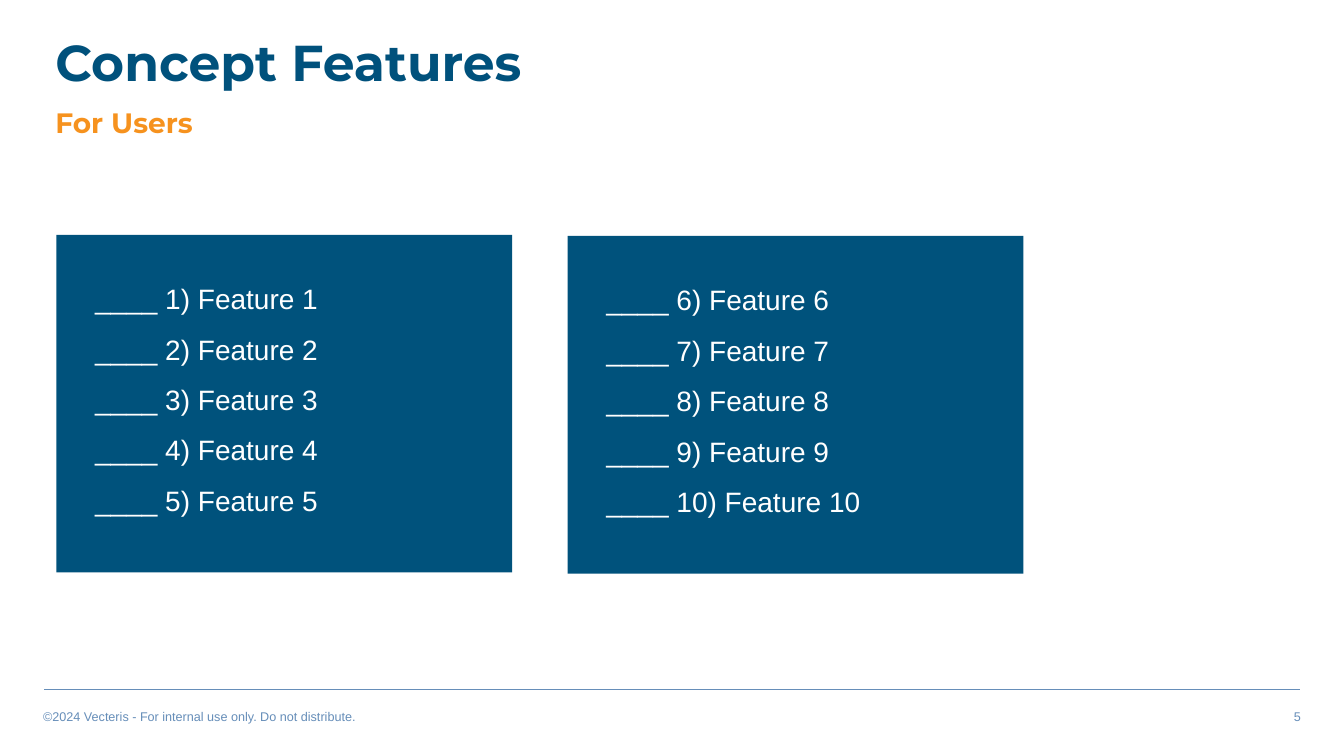
from pptx import Presentation
from pptx import util as u
from pptx.dml.color import RGBColor
from pptx.enum import shapes, text
from pptx.oxml.ns import qn
from lxml import etree

Inches = u.Inches
NAVY, PANEL, ORANGE, STEEL, WHITE = "00517C", "00527C", "F6921E", "668EB9", "FFFFFF"


def color(value):
    """Turn a hex string into a colour."""
    return RGBColor.from_string(value)


def add_text(page, left, top, width, height, lines, *, size, fill, font="Arial",
             bold=False, align=text.PP_ALIGN.LEFT, anchor=text.MSO_ANCHOR.TOP, spacing=1.0):
    """Add a text box with one paragraph per line."""
    box = page.shapes.add_textbox(Inches(left), Inches(top), Inches(width), Inches(height))
    frame = box.text_frame
    frame.word_wrap = True
    frame.vertical_anchor = anchor
    frame.text = "\n".join(lines)
    for para in frame.paragraphs:
        para.alignment = align
        para.line_spacing = spacing
        for span in para.runs:
            span.font.name = font
            span.font.size = u.Pt(size)
            span.font.bold = bold
            span.font.color.rgb = color(fill)


def add_panel(page, left, top, first):
    """Add a panel listing five numbered features with blanks to fill in."""
    panel = page.shapes.add_shape(shapes.MSO_SHAPE.RECTANGLE, Inches(left), Inches(top),
                                  Inches(4.52), Inches(3.35))
    panel.shadow.inherit = False
    panel.fill.solid()
    panel.fill.fore_color.rgb = color(PANEL)
    panel.line.fill.background()
    lines = [f"____ {number}) Feature {number}" for number in range(first, first + 5)]
    add_text(page, left + 0.285, top + 0.25, 2.98, 2.46, lines, size=20, fill=WHITE, spacing=1.5)


def add_footer(page):
    """Add the footer rule, copyright line and page number."""
    rule = page.shapes.add_connector(shapes.MSO_CONNECTOR.STRAIGHT, Inches(0.44), Inches(6.84),
                                     Inches(12.89), Inches(6.84))
    rule.line.color.rgb = color(STEEL)
    rule.line.width = u.Pt(1)
    etree.SubElement(rule.element.spPr, qn("a:effectLst"))
    add_text(page, 0.33, 6.98, 5.33, 0.25,
             ["©2024 Vecteris - For internal use only. Do not distribute."], size=9, fill=STEEL)
    add_text(page, 7.67, 6.98, 5.33, 0.25, ["5"], size=9, fill=STEEL, align=text.PP_ALIGN.RIGHT)


def main():
    """Build the slide and save it."""
    deck = Presentation()
    deck.slide_width, deck.slide_height = Inches(13.33), Inches(7.5)
    page = deck.slides.add_slide(deck.slide_layouts[6])
    add_footer(page)
    add_text(page, 0.45, 0.33, 8.52, 0.76, ["Concept Features"], size=36, fill=NAVY,
             font="Montserrat", bold=True, spacing=0.9)
    add_text(page, 0.45, 1.01, 8.52, 0.45, ["For Users"], size=20, fill=ORANGE,
             font="Montserrat", bold=True, anchor=text.MSO_ANCHOR.MIDDLE, spacing=0.9)
    add_panel(page, 0.56, 2.33, first=1)
    add_panel(page, 5.63, 2.34, first=6)
    deck.save("out.pptx")


if __name__ == "__main__":
    main()
